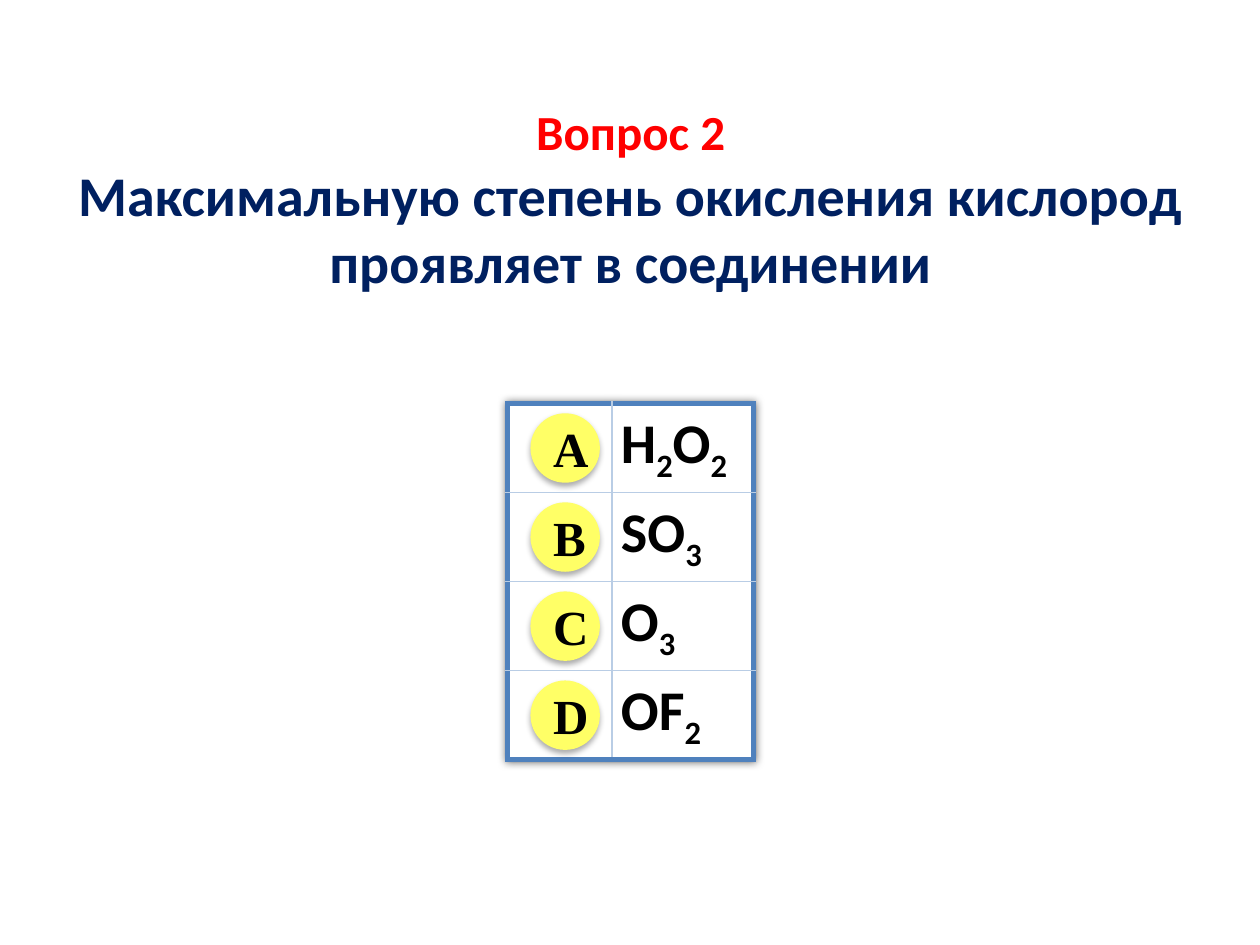
from dataclasses import dataclass

from lxml.etree import SubElement
from pptx import Presentation
from pptx.dml.color import RGBColor
from pptx.enum.shapes import MSO_SHAPE as Shape
from pptx.enum.text import MSO_ANCHOR as Anchor, MSO_AUTO_SIZE as AutoSize, PP_ALIGN as Align
from pptx.oxml.ns import qn
from pptx.util import Inches, Pt


@dataclass(frozen=True)
class Theme:
    paper: str = "FFFFFF"
    ink: str = "000000"
    label: str = "FF0000"
    question: str = "002060"
    badge: str = "FFFF66"
    frame: str = "4F81BD"
    grid: str = "B9CDE5"
    body_font: str = "Calibri"
    letter_font: str = "Times New Roman"
    small: int = 28
    large: int = 32
    frame_width: float = 3
    grid_width: float = 1


@dataclass(frozen=True)
class Box:
    left: int
    top: int
    width: int
    height: int

    def share(self, x, y, w, h):
        return Box(round(self.left + x * self.width), round(self.top + y * self.height),
                   round(w * self.width), round(h * self.height))

    @property
    def place(self):
        return self.left, self.top, self.width, self.height


THEME = Theme()
COLUMN_SHARES = (0.425, 0.575)
SUBSCRIPT = "-25000"
ANSWERS = {"A": "H2O2", "B": "SO3", "C": "O3", "D": "OF2"}


def apply(target, **values):
    for attribute, value in values.items():
        setattr(target, attribute, value)


def paint(fill, color):
    fill.solid()
    fill.fore_color.rgb = RGBColor.from_string(color)


def style_font(font, name, size, color):
    apply(font, name=name, size=Pt(size), bold=True)
    font.color.rgb = RGBColor.from_string(color)


def add_shadow(properties, alpha, blur, distance):
    effects = SubElement(properties, qn("a:effectLst"))
    shadow = SubElement(effects, qn("a:outerShdw"), blurRad=str(Pt(blur)),
                        dist=str(Pt(distance)), dir="5400000", rotWithShape="0")
    color = SubElement(shadow, qn("a:srgbClr"), val=THEME.ink)
    SubElement(color, qn("a:alpha"), val=str(alpha * 1000))


def set_borders(cell, outer_sides):
    """Draw the frame on the outer sides of a cell and grid lines on the others."""
    properties = cell._tc.get_or_add_tcPr()
    for side in "LRTB":
        outer = side in outer_sides
        width = THEME.frame_width if outer else THEME.grid_width
        line = SubElement(properties, qn(f"a:ln{side}"), w=str(Pt(width)))
        fill = SubElement(line, qn("a:solidFill"))
        SubElement(fill, qn("a:srgbClr"), val=THEME.frame if outer else THEME.grid)


def write_formula(cell, formula):
    """Write a chemical formula with its digits as subscripts."""
    apply(cell, vertical_anchor=Anchor.MIDDLE, margin_left=Inches(0.07),
          margin_right=Inches(0.07), margin_top=0, margin_bottom=0)
    paragraph = cell.text_frame.paragraphs[0]
    for digit_or_symbol in formula:
        run = paragraph.add_run()
        run.text = digit_or_symbol
        style_font(run.font, THEME.body_font, THEME.large, THEME.ink)
        if digit_or_symbol.isdigit():
            run.font._element.set("baseline", SUBSCRIPT)


def place_question(slide, box, label, question):
    title = slide.shapes.title
    apply(title, left=box.left, top=box.top, width=box.width, height=box.height)
    paint(title.fill, THEME.paper)
    frame = title.text_frame
    apply(frame, word_wrap=True, auto_size=AutoSize.NONE, vertical_anchor=Anchor.TOP)
    frame.text = f"{label}\n{question}"
    formats = ((THEME.small, THEME.label), (THEME.large, THEME.question))
    for paragraph, (size, color) in zip(frame.paragraphs, formats):
        paragraph.alignment = Align.CENTER
        style_font(paragraph.runs[0].font, THEME.body_font, size, color)


def place_table(slide, box, formulas):
    last_row = len(formulas) - 1
    table = slide.shapes.add_table(len(formulas), 2, *box.place).table
    apply(table, first_row=False, horz_banding=False)
    add_shadow(table._tbl.tblPr, alpha=60, blur=5, distance=0)
    # Effects come before the style id in the table properties.
    table._tbl.tblPr.insert(0, table._tbl.tblPr[-1])
    for column, share in zip(table.columns, COLUMN_SHARES):
        column.width = round(box.width * share)
    for index, formula in enumerate(formulas):
        ends = ("T" if index == 0 else "") + ("B" if index == last_row else "")
        for cell, side in zip(table.rows[index].cells, "LR"):
            set_borders(cell, ends + side)
            paint(cell.fill, THEME.paper)
        write_formula(table.cell(index, 1), formula)


def place_badges(slide, box, letters):
    group = slide.shapes.add_group_shape()
    row_share = 1 / len(letters)
    for index, letter in enumerate(letters):
        row = box.share(0, index * row_share, 1, row_share)
        size = round(row.height * 0.78)
        badge = group.shapes.add_shape(
            Shape.OVAL, row.left + round(row.width * 0.55) - size // 2,
            row.top + (row.height - size) // 2, size, size)
        paint(badge.fill, THEME.badge)
        badge.line.fill.background()
        add_shadow(badge._element.spPr, alpha=32, blur=3.5, distance=2.2)
        frame = badge.text_frame
        apply(frame, word_wrap=True, vertical_anchor=Anchor.MIDDLE)
        frame.text = letter
        frame.paragraphs[0].alignment = Align.CENTER
        style_font(frame.paragraphs[0].runs[0].font, THEME.letter_font, THEME.small, THEME.ink)


def place_answers(slide, box, answers):
    place_table(slide, box, list(answers.values()))
    place_badges(slide, box.share(0, 0, COLUMN_SHARES[0], 1), list(answers))


def main():
    deck = Presentation()
    apply(deck, slide_width=Inches(10), slide_height=Inches(7.5))
    slide = deck.slides.add_slide(deck.slide_layouts.get_by_name("Title Only"))
    page = Box(0, 0, deck.slide_width, deck.slide_height)
    place_answers(slide, page.share(0.403, 0.427, 0.195, 0.377), ANSWERS)
    place_question(slide, page.share(0.024, 0.101, 0.953, 0.22), "Вопрос 2",
                   "Максимальную степень окисления кислород проявляет в соединении")
    deck.save("out.pptx")


if __name__ == "__main__":
    main()
